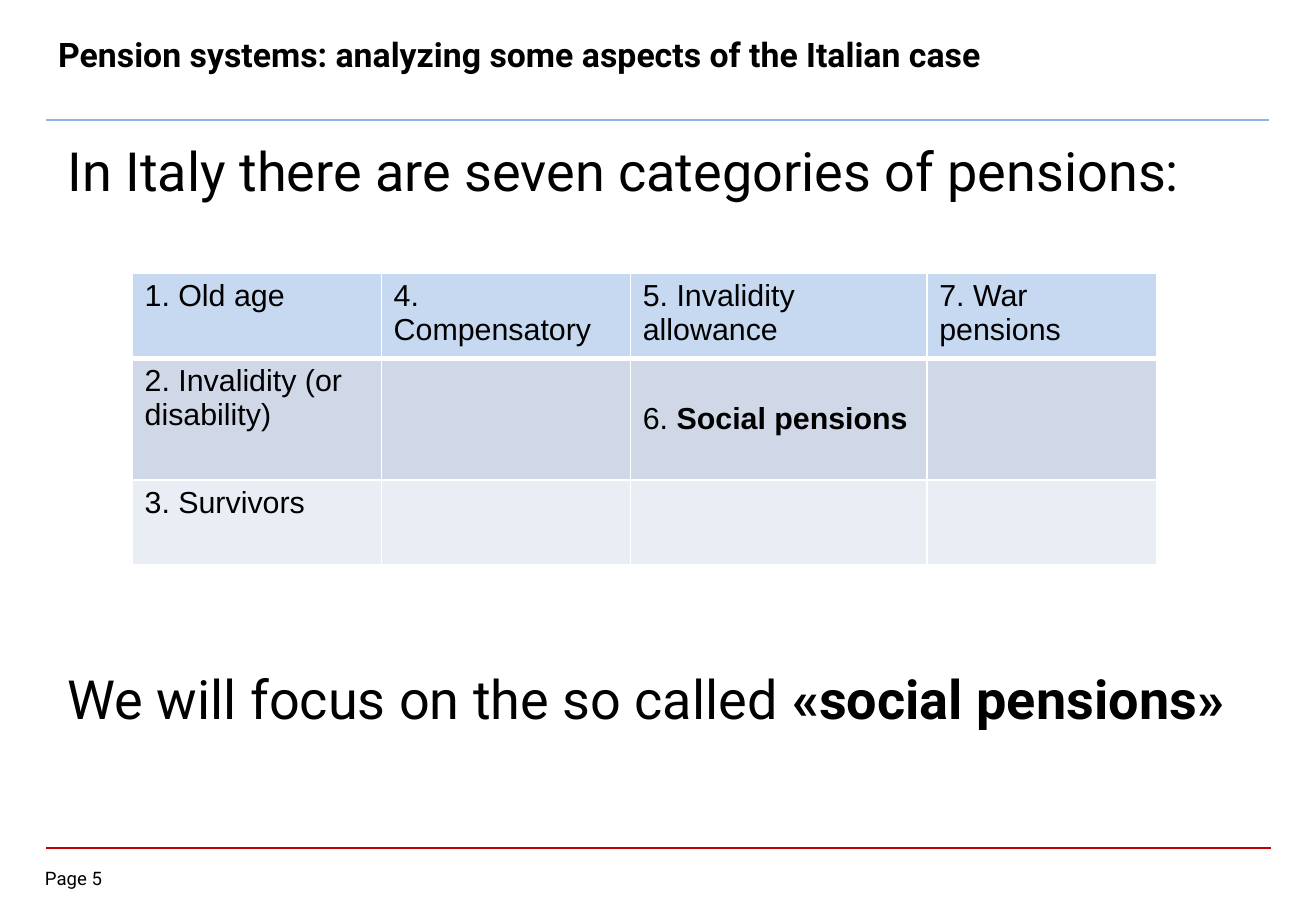
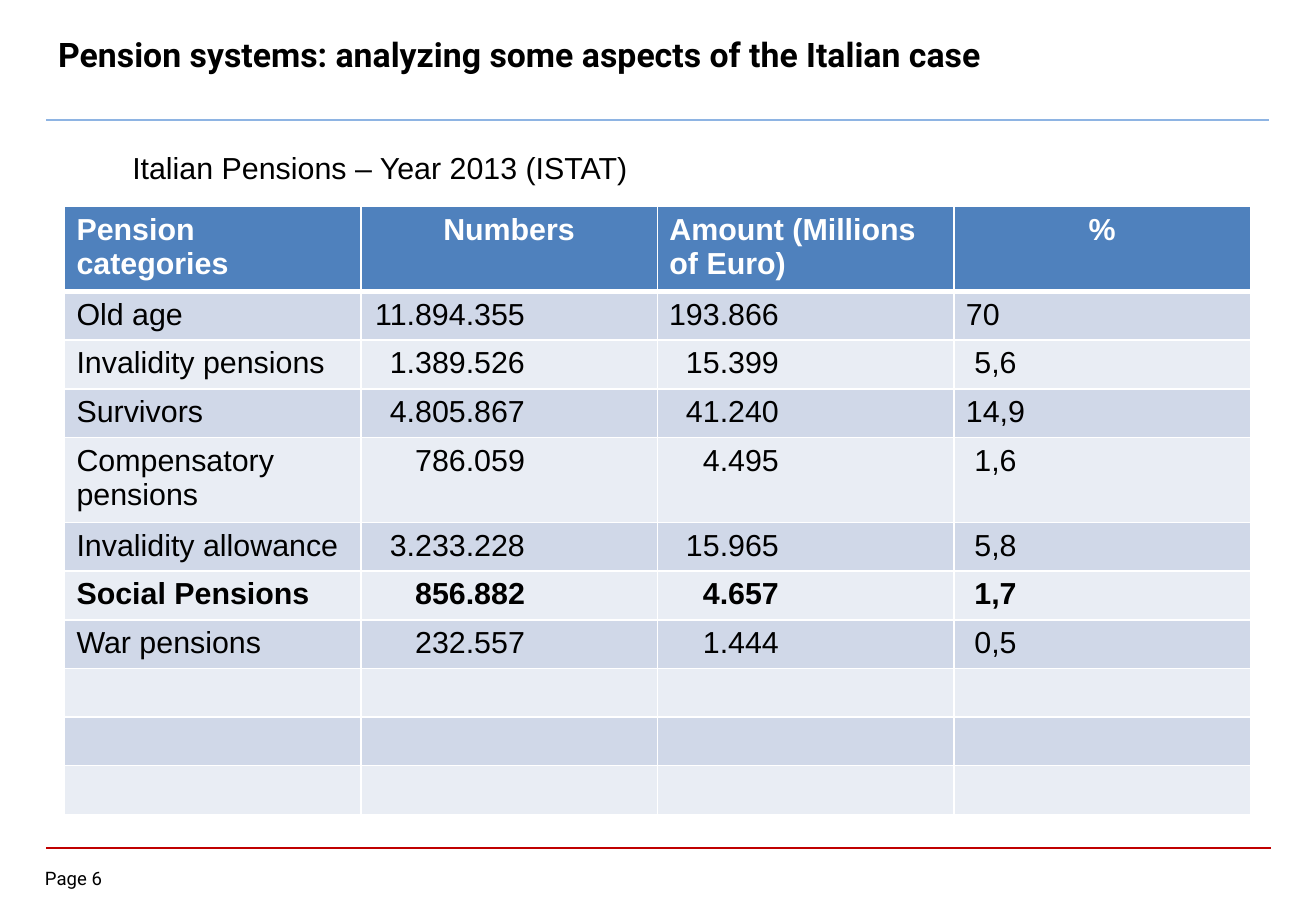
"""Builds two slides about Italian pension categories and amounts."""
from dataclasses import dataclass

from pptx import Presentation
from pptx.dml.color import RGBColor
from pptx.enum.shapes import MSO_CONNECTOR
from pptx.enum.text import MSO_ANCHOR, PP_ALIGN
from pptx.oxml.ns import qn
from pptx.util import Emu, Pt
from lxml.etree import SubElement

PX = 9144
COLOURS = {
    "black": "000000", "white": "FFFFFF", "red": "C00000", "sky": "8EB4E3",
    "pale": "C6D9F1", "blue": "4F81BD", "odd": "D0D8E8", "even": "E9EDF4",
}
TITLE = "Pension systems: analyzing some aspects of the Italian case"


@dataclass(frozen=True)
class Span:
    text: str
    bold: bool = False


@dataclass(frozen=True)
class Style:
    size: int
    font: str = "Roboto"
    colour: str = "black"
    bold: bool = False


@dataclass(frozen=True)
class Rule:
    left: int
    right: int
    y: int
    colour: str
    weight: float


@dataclass(frozen=True)
class Column:
    width: int
    heading_align: PP_ALIGN = PP_ALIGN.LEFT
    align: PP_ALIGN = PP_ALIGN.LEFT
    left_margin: int = 10
    right_margin: int = 10
    single_digit_indent: int = 0


@dataclass(frozen=True)
class Grid:
    left: int
    top: int
    columns: list[Column]
    heights: list[int]
    rows: list[list[str]]
    heading_fill: str
    heading: Style
    bold_row: int = -1


RULES = [Rule(38, 1046, 698, "red", 1), Rule(38, 1044, 99, "sky", 1.5)]
TABLE_TEXT = Style(18, "Arial")
CATEGORIES = Grid(
    109, 225, [Column(width) for width in (205, 205, 244, 189)], [70, 100, 70],
    [
        ["1. Old age", "4. Compensatory", "5. Invalidity allowance", "7. War pensions"],
        ["2. Invalidity (or disability)", "", "", ""],
        ["3. Survivors", "", "", ""],
    ],
    "pale", TABLE_TEXT,
)
AMOUNTS = Grid(
    53, 170,
    [
        Column(244),
        Column(244, PP_ALIGN.CENTER, PP_ALIGN.RIGHT, 0, 109),
        Column(244, PP_ALIGN.LEFT, PP_ALIGN.RIGHT, 0, 144),
        Column(244, PP_ALIGN.CENTER, single_digit_indent=7),
    ],
    [70, 40, 40, 40, 70] + [40] * 6,
    [
        ["Pension categories", "Numbers", "Amount (Millions of Euro)", "%"],
        ["Old age", "11.894.355", "193.866", "70"],
        ["Invalidity pensions", "1.389.526", "15.399", "5,6"],
        ["Survivors", "4.805.867", "41.240", "14,9"],
        ["Compensatory pensions", "786.059", "4.495", "1,6"],
        ["Invalidity allowance", "3.233.228", "15.965", "5,8"],
        ["Social Pensions", "856.882", "4.657", "1,7"],
        ["War pensions", "232.557", "1.444", "0,5"],
    ] + [[""] * 4] * 3,
    "blue", Style(18, "Arial", "white", True), 6,
)


def px(length: int) -> Emu:
    """Turns px into EMU."""
    return Emu(length * PX)


def rgb(name: str) -> RGBColor:
    """Looks up a named colour."""
    return RGBColor.from_string(COLOURS[name])


def style_font(font, style: Style) -> None:
    """Applies a style to a font."""
    font.name = style.font
    font.size = Pt(style.size)
    font.bold = style.bold
    font.color.rgb = rgb(style.colour)


def write(para, spans: list[Span], style: Style) -> None:
    """Fills a paragraph with styled spans."""
    style_font(para.font, style)
    for span in spans:
        run = para.add_run()
        run.text = span.text
        if span.bold:
            run.font.bold = True


def add_text(page, area: tuple[int, int, int, int], paragraphs: list[list[Span]],
             style: Style, gap: int = 0, inset: bool = True,
             anchor: MSO_ANCHOR = MSO_ANCHOR.TOP) -> None:
    """Adds a text box with a gap in points between paragraphs."""
    frame = page.shapes.add_textbox(*map(px, area)).text_frame
    frame.word_wrap = True
    frame.vertical_anchor = anchor
    if not inset:
        frame.margin_left = frame.margin_right = 0
        frame.margin_top = frame.margin_bottom = 0
    for index, spans in enumerate(paragraphs):
        para = frame.add_paragraph() if index else frame.paragraphs[0]
        if index:
            para.space_before = Pt(gap)
        write(para, spans, style)


def add_rule(page, rule: Rule) -> None:
    """Draws a horizontal rule."""
    line = page.shapes.add_connector(
        MSO_CONNECTOR.STRAIGHT, px(rule.left), px(rule.y), px(rule.right), px(rule.y))
    line.line.color.rgb = rgb(rule.colour)
    line.line.width = Pt(rule.weight)
    SubElement(line._element.spPr, qn("a:effectLst"))


def set_borders(cell, top: int, bottom: int) -> None:
    """Gives a cell white borders with weights in points."""
    properties = cell._tc.get_or_add_tcPr()
    for side, weight in (("L", 1), ("R", 1), ("T", top), ("B", bottom)):
        border = SubElement(properties, qn(f"a:ln{side}"), w=str(Pt(weight)))
        fill = SubElement(border, qn("a:solidFill"))
        SubElement(fill, qn("a:srgbClr"), val=COLOURS["white"])


def add_grid(page, grid: Grid):
    """Adds a banded table and returns it."""
    width = sum(column.width for column in grid.columns)
    area = (grid.left, grid.top, width, sum(grid.heights))
    table = page.shapes.add_table(
        len(grid.rows), len(grid.columns), *map(px, area)).table
    for index, column in enumerate(grid.columns):
        table.columns[index].width = px(column.width)
    for row, texts in enumerate(grid.rows):
        table.rows[row].height = px(grid.heights[row])
        heading = row == 0
        body = Style(18, "Arial", bold=row == grid.bold_row)
        band = "odd" if row % 2 else "even"
        for index, (column, text) in enumerate(zip(grid.columns, texts)):
            cell = table.cell(row, index)
            set_borders(cell, 3 if row == 1 else 1, 3 if heading else 1)
            cell.fill.solid()
            cell.fill.fore_color.rgb = rgb(grid.heading_fill if heading else band)
            if not heading:
                indent = column.single_digit_indent if text.find(",") == 1 else 0
                cell.margin_left = px(column.left_margin + indent)
                cell.margin_right = px(column.right_margin)
            para = cell.text_frame.paragraphs[0]
            para.alignment = column.heading_align if heading else column.align
            write(para, [Span(text)] if text else [], grid.heading if heading else body)
    return table


def add_page(deck, number: int):
    """Adds a page with its rules, title and page number."""
    page = deck.slides.add_slide(deck.slide_layouts[6])
    for rule in RULES:
        add_rule(page, rule)
    add_text(page, (37, 714, 73, 22), [[Span(f"Page {number}")]], Style(11), inset=False)
    add_text(page, (38, 9, 992, 71), [[Span(TITLE)]], Style(20, bold=True),
             anchor=MSO_ANCHOR.MIDDLE)
    return page


def add_categories(deck) -> None:
    """Builds the page of pension categories."""
    page = add_page(deck, 5)
    add_text(page, (46, 108, 984, 563), [
        [Span("In Italy there are seven categories of pensions:")],
        [Span("We will focus on the so called "), Span("«social pensions»", True)],
    ], Style(32), gap=275)
    social = add_grid(page, CATEGORIES).cell(1, 2)
    social.vertical_anchor = MSO_ANCHOR.MIDDLE
    write(social.text_frame.paragraphs[0],
          [Span("6. "), Span("Social pensions", True)], TABLE_TEXT)


def add_amounts(deck) -> None:
    """Builds the page of pension numbers and amounts."""
    page = add_page(deck, 6)
    add_grid(page, AMOUNTS)
    add_text(page, (99, 118, 435, 40),
             [[Span("Italian Pensions – Year 2013 (ISTAT)")]], TABLE_TEXT)


def main() -> None:
    """Builds and saves the deck."""
    deck = Presentation()
    deck.slide_width, deck.slide_height = px(1083), px(750)
    add_categories(deck)
    add_amounts(deck)
    deck.save("out.pptx")


if __name__ == "__main__":
    main()
